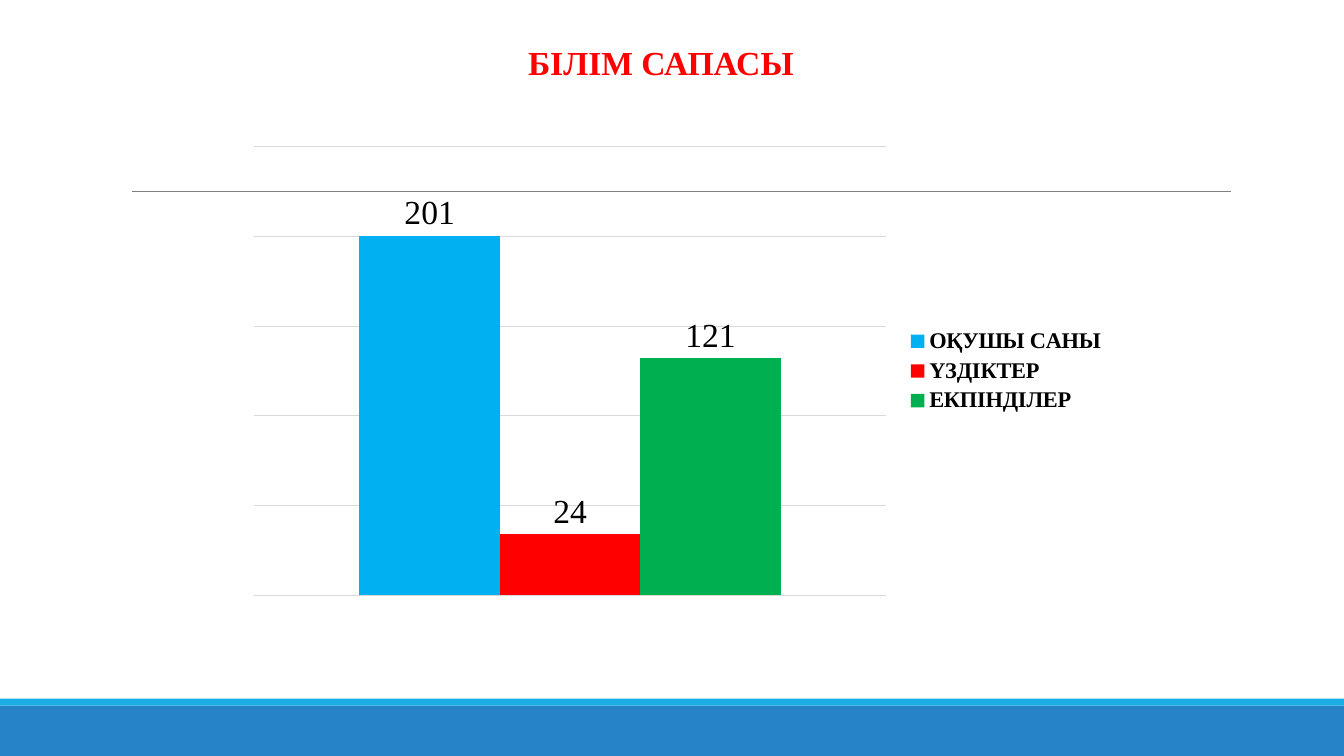
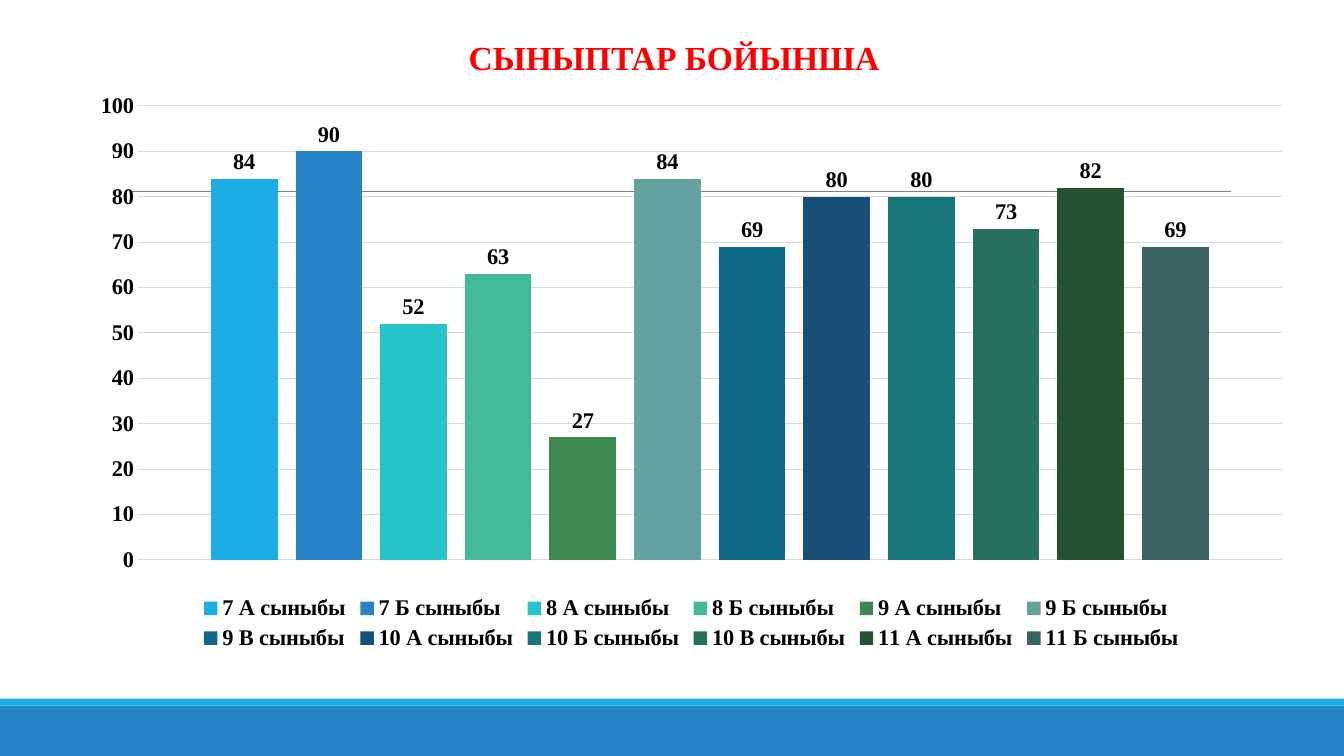
import pptx
import pptx.chart.data
import pptx.dml.color
import pptx.enum.chart
import pptx.enum.shapes
import pptx.enum.text
import pptx.util
from lxml import etree

Pt = pptx.util.Pt
ALIGN = pptx.enum.text.PP_ALIGN
LEGEND = pptx.enum.chart.XL_LEGEND_POSITION
OUTSIDE_END = pptx.enum.chart.XL_LABEL_POSITION.OUTSIDE_END

COLORS = {
    "background": "FFFFFF", "text": "000000", "title": "FF0000",
    "band": "2683C6", "stripe": "1CADE4", "rule": "808080", "grid": "D9D9D9",
}
FONT = "Times New Roman"


def rgb(value):
    return pptx.dml.color.RGBColor.from_string(value)


def style_font(font, size, color=COLORS["text"], bold=True, name=FONT):
    font.name = name
    font.size = Pt(size)
    font.bold = bold
    font.color.rgb = rgb(color)


def write_text(tf, text, align=None, **font_format):
    p = tf.paragraphs[0]
    p.alignment = align
    r = p.add_run()
    r.text = text
    style_font(r.font, **font_format)


class Deck:
    """Presentation with its style and the slide being built."""

    width, height = 960, 540

    def __init__(self):
        self.prs = pptx.Presentation()
        self.prs.slide_width = Pt(self.width)
        self.prs.slide_height = Pt(self.height)
        self.slide = None

    def add_slide(self):
        self.slide = self.prs.slides.add_slide(self.prs.slide_layouts[5])
        fill = self.slide.background.fill
        fill.solid()
        fill.fore_color.rgb = rgb(COLORS["background"])
        self.band(504, 36, COLORS["band"])
        self.band(499, 5, COLORS["stripe"])
        self.rule(94.5, 879, 136.5)

    def band(self, top, height, color):
        sp = self.slide.shapes.add_shape(
            pptx.enum.shapes.MSO_SHAPE.RECTANGLE,
            0, Pt(top), Pt(self.width), Pt(height))
        sp.shadow.inherit = False
        sp.fill.solid()
        sp.fill.fore_color.rgb = rgb(color)
        sp.line.fill.background()

    def rule(self, left, right, y):
        line = self.slide.shapes.add_connector(
            pptx.enum.shapes.MSO_CONNECTOR.STRAIGHT,
            Pt(left), Pt(y), Pt(right), Pt(y))
        line.line.color.rgb = rgb(COLORS["rule"])
        line.line.width = Pt(0.5)
        etree.SubElement(line.element.spPr, pptx.oxml.ns.qn("a:effectLst"))

    def title(self, text, box, align):
        sp = self.slide.shapes.title
        sp.left, sp.top, sp.width, sp.height = map(Pt, box)
        tf = sp.text_frame
        tf.word_wrap = True
        tf.auto_size = pptx.enum.text.MSO_AUTO_SIZE.NONE
        tf.vertical_anchor = pptx.enum.text.MSO_ANCHOR.TOP
        write_text(tf, text, align, size=24, color=COLORS["title"])

    def column_chart(self, box, series, maximum, step, legend, gap, overlap=0,
                     label_size=16, show_scale=True):
        """series rows: name, value, colour and, if it differs, label text."""
        data = pptx.chart.data.CategoryChartData()
        data.categories = ["1"]
        for name, value, *_ in series:
            data.add_series(name, [value])
        chart = self.slide.shapes.add_chart(
            pptx.enum.chart.XL_CHART_TYPE.COLUMN_CLUSTERED,
            *map(Pt, box), data).chart
        chart.has_title = False
        style_font(chart.font, 16)
        self.legend(chart, legend)
        self.axes(chart, maximum, step, show_scale)
        plot = chart.plots[0]
        plot.vary_by_categories = False
        plot.gap_width = gap
        plot.overlap = overlap
        for bar, (_, _, color, *label) in zip(plot.series, series):
            bar.format.fill.solid()
            bar.format.fill.fore_color.rgb = rgb(color)
            labels = bar.data_labels
            labels.show_value = True
            labels.position = OUTSIDE_END
            style_font(labels.font, label_size)
            if label:
                point_label = bar.points[0].data_label
                write_text(point_label.text_frame, label[0],
                           size=label_size, bold=False)
                point_label.position = OUTSIDE_END

    def legend(self, chart, position):
        chart.has_legend = True
        chart.legend.position = position
        chart.legend.include_in_layout = False
        style_font(chart.legend.font, 16)

    def axes(self, chart, maximum, step, show_scale):
        chart.category_axis.visible = False
        axis = chart.value_axis
        axis.visible = show_scale
        axis.minimum_scale = 0
        axis.maximum_scale = maximum
        axis.major_unit = step
        axis.major_tick_mark = pptx.enum.chart.XL_TICK_MARK.NONE
        axis.format.line.fill.background()
        axis.has_major_gridlines = True
        grid = axis.major_gridlines.format.line
        grid.color.rgb = rgb(COLORS["grid"])
        grid.width = Pt(0.75)


QUALITY = [
    ("ОҚУШЫ САНЫ", 200, "00B0F0", "201"),
    ("ҮЗДІКТЕР", 34, "FF0000", "24"),
    ("ЕКПІНДІЛЕР", 132, "00B050", "121"),
]
CLASSES = [
    ("7 А сыныбы", 84, "1CADE4"),
    ("7 Б сыныбы", 90, "2683C6"),
    ("8 А сыныбы", 52, "28C4CC"),
    ("8 Б сыныбы", 63, "42BA97"),
    ("9 А сыныбы", 27, "3E8853"),
    ("9 Б сыныбы", 84, "62A39F"),
    ("9 В сыныбы", 69, "106889"),
    ("10 А сыныбы", 80, "174F77"),
    ("10 Б сыныбы", 80, "18767A"),
    ("10 В сыныбы", 73, "28705B"),
    ("11 А сыныбы", 82, "255232"),
    ("11 Б сыныбы", 69, "3A6360"),
]


def main():
    deck = Deck()

    deck.add_slide()
    deck.title("БІЛІМ САПАСЫ", (232, 26.5, 480, 65.5), ALIGN.CENTER)
    deck.column_chart((169, 98, 628.5, 334), QUALITY, maximum=250, step=50,
                      legend=LEGEND.RIGHT, gap=150, label_size=24,
                      show_scale=False)

    deck.add_slide()
    deck.title("СЫНЫПТАР БОЙЫНША", (327.5, 22.5, 414, 36), ALIGN.LEFT)
    deck.column_chart((54.5, 58.5, 878.5, 409.5), CLASSES, maximum=100,
                      step=10, legend=LEGEND.BOTTOM, gap=219, overlap=-27)

    deck.prs.save("out.pptx")


if __name__ == "__main__":
    main()
